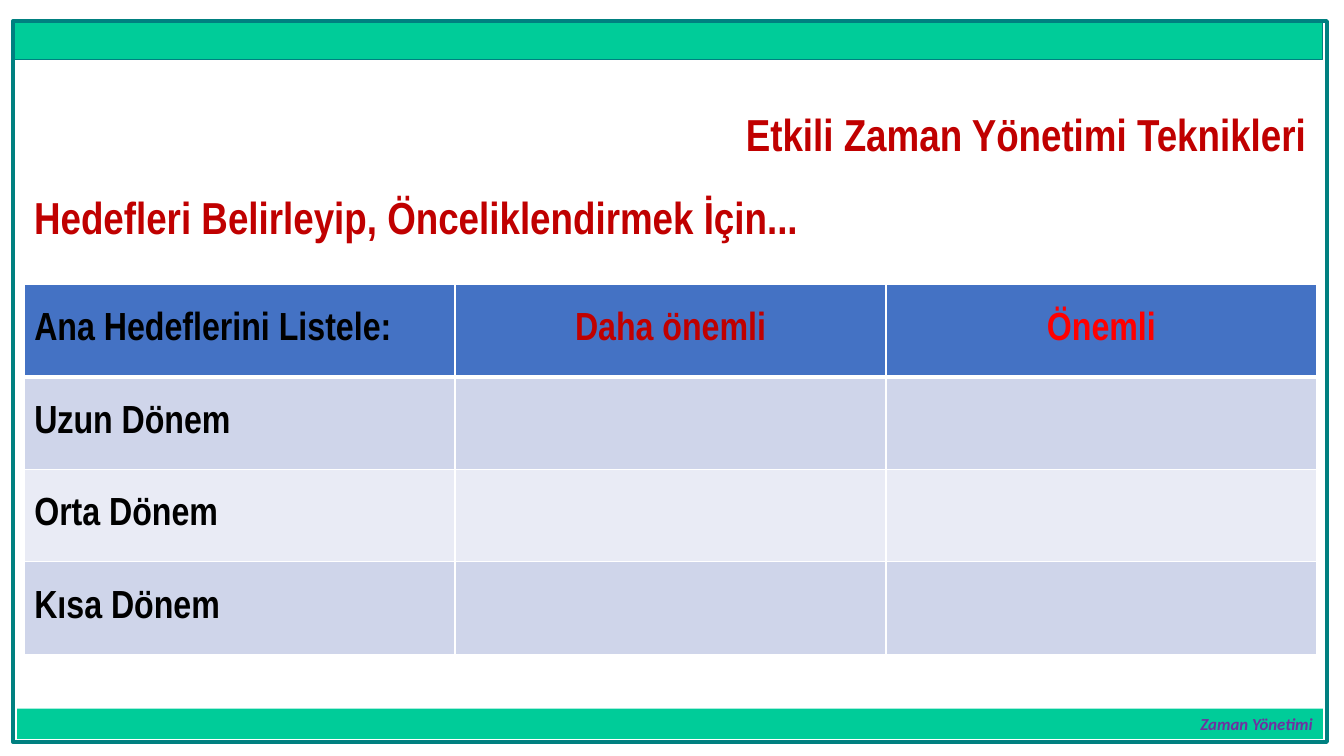
import dataclasses

import lxml.etree
import pptx
import pptx.dml.color
import pptx.enum.shapes
import pptx.enum.text
import pptx.oxml.ns
import pptx.util

PX = 9144
ALIGN = pptx.enum.text.PP_ALIGN
MIDDLE = pptx.enum.text.MSO_ANCHOR.MIDDLE


@dataclasses.dataclass(frozen=True)
class Theme:
    font: str = "Arial Narrow"
    footer_font: str = "Calibri"
    title_size: int = 32
    table_size: int = 28
    footer_size: int = 12
    bar: str = "00CC99"
    frame: str = "008080"
    title: str = "C00000"
    important: str = "FF0000"
    footer: str = "7030A0"
    text: str = "000000"
    border: str = "FFFFFF"
    header: str = "4472C4"
    bands: tuple = ("CFD5EA", "E9EBF5")


def rgb(value):
    return pptx.dml.color.RGBColor.from_string(value)


def px(*lengths):
    return [pptx.util.Emu(length * PX) for length in lengths]


class SlideBuilder:
    def __init__(self, slide, theme):
        self.slide = slide
        self.theme = theme

    def rect(self, box, fill=None, line=None, width=0.75):
        sp = self.slide.shapes.add_shape(
            pptx.enum.shapes.MSO_SHAPE.RECTANGLE, *px(*box))
        sp.shadow.inherit = False
        if fill:
            sp.fill.solid()
            sp.fill.fore_color.rgb = rgb(fill)
        else:
            sp.fill.background()
        if line:
            sp.line.color.rgb = rgb(line)
            sp.line.width = pptx.util.Pt(width)
        else:
            sp.line.fill.background()
        return sp

    def label(self, tf, text, align, color, size, font=None, italic=None):
        tf.text = text
        tf.word_wrap = True
        p = tf.paragraphs[0]
        p.alignment = align
        r = p.runs[0]
        r.font.name = font or self.theme.font
        r.font.size = pptx.util.Pt(size)
        r.font.bold = True
        r.font.italic = italic
        r.font.color.rgb = rgb(color)
        return p

    def text(self, box, text, align):
        tf = self.slide.shapes.add_textbox(*px(*box)).text_frame
        return self.label(tf, text, align, self.theme.title, self.theme.title_size)

    def borders(self, cell, top, bottom):
        tcPr = cell._tc.get_or_add_tcPr()
        widths = {"L": 1, "R": 1, "T": top, "B": bottom}
        for i, (side, width) in enumerate(widths.items()):
            ln = lxml.etree.Element(pptx.oxml.ns.qn(f"a:ln{side}"),
                                    w=str(pptx.util.Pt(width)))
            fill = lxml.etree.SubElement(ln, pptx.oxml.ns.qn("a:solidFill"))
            lxml.etree.SubElement(fill, pptx.oxml.ns.qn("a:srgbClr"),
                                  val=self.theme.border)
            tcPr.insert(i, ln)

    def table(self, box, headings, periods):
        t = self.theme
        rows = [headings] + [[(period, t.text)] for period in periods]
        left, top, width, height = box
        table = self.slide.shapes.add_table(
            len(rows), len(headings), *px(left, top, width, height)).table
        for row, entries in enumerate(rows):
            table.rows[row].height = px(height)[0] // len(rows)
            for col in range(len(headings)):
                cell = table.cell(row, col)
                cell.vertical_anchor = MIDDLE
                cell.fill.solid()
                fill = t.bands[(row - 1) % 2] if row else t.header
                cell.fill.fore_color.rgb = rgb(fill)
                self.borders(cell, 3 if row == 1 else 1, 1 if row else 3)
                if col < len(entries):
                    align = ALIGN.CENTER if col else ALIGN.LEFT
                    self.label(cell.text_frame, entries[col][0], align,
                               entries[col][1], t.table_size)


def main():
    prs = pptx.Presentation()
    prs.slide_width, prs.slide_height = px(1333, 750)
    theme = Theme()
    s = SlideBuilder(prs.slides.add_slide(prs.slide_layouts[6]), theme)

    s.rect((14, 22, 1298, 37), theme.bar, theme.frame)
    s.rect((13, 21, 1303, 715), line=theme.frame, width=3)
    footer = s.rect((17, 703, 1295, 30), theme.bar)
    footer.text_frame.vertical_anchor = MIDDLE
    s.label(footer.text_frame, "Zaman Yönetimi", ALIGN.RIGHT, theme.footer,
            theme.footer_size, theme.footer_font, True)

    s.text((24, 101, 1282, 64), "Etkili Zaman Yönetimi Teknikleri", ALIGN.RIGHT)
    p = s.text((24, 189, 1282, 510),
               "Hedefleri Belirleyip, Önceliklendirmek İçin...", ALIGN.JUSTIFY)
    p.line_spacing = 0.9
    p.space_before = pptx.util.Pt(10)

    s.table((24, 282, 1282, 367),
            [("Ana Hedeflerini Listele:", theme.text),
             ("Daha önemli", theme.title),
             ("Önemli", theme.important)],
            ["Uzun Dönem", "Orta Dönem", "Kısa Dönem"])
    prs.save("out.pptx")


if __name__ == "__main__":
    main()
